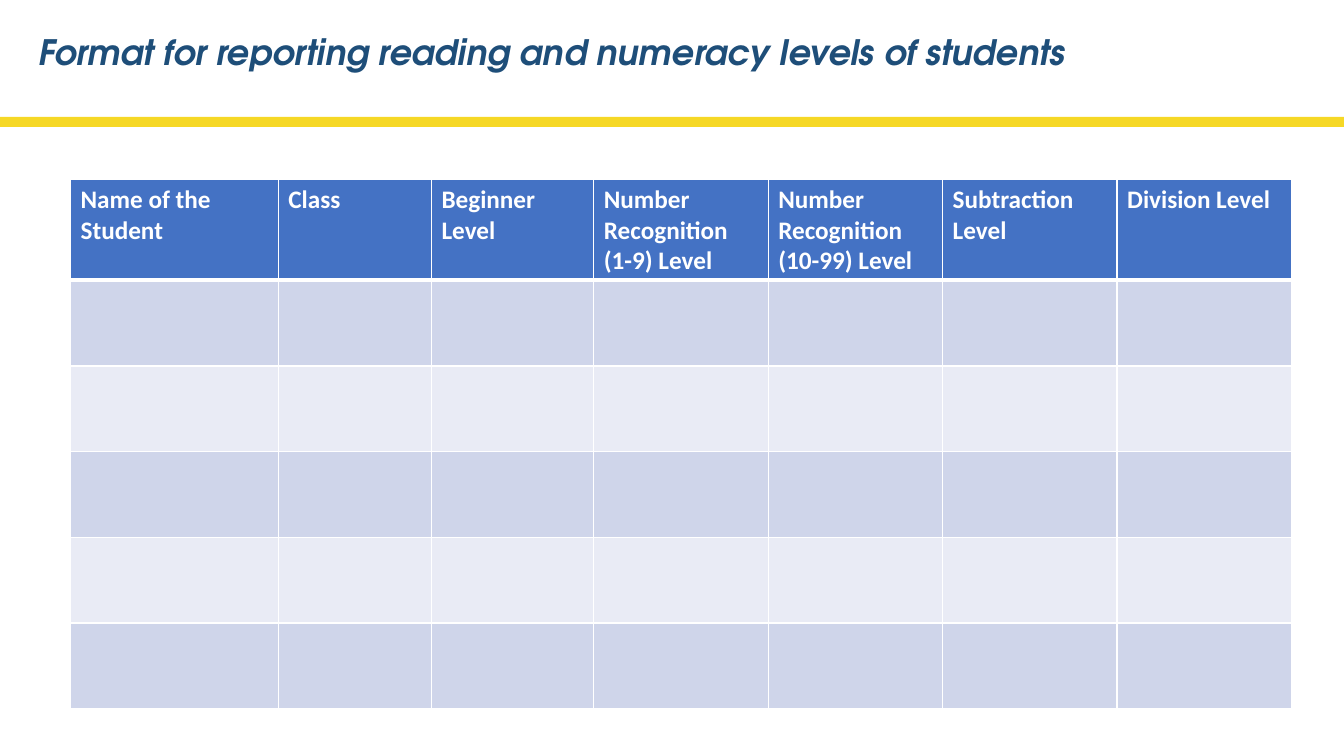
"""Build a slide with a blank reporting table for student levels."""
from lxml import etree
from pptx import Presentation
from pptx.dml.color import RGBColor
from pptx.enum.shapes import MSO_SHAPE
from pptx.enum.text import MSO_ANCHOR, MSO_AUTO_SIZE, PP_ALIGN
from pptx.oxml.ns import qn
from pptx.util import Pt

PX = 9144
RECT = MSO_SHAPE.RECTANGLE
TOP = MSO_ANCHOR.TOP
LEFT = PP_ALIGN.LEFT
FIT_SHAPE = MSO_AUTO_SIZE.SHAPE_TO_FIT_TEXT
NAVY = RGBColor(0x1E, 0x4E, 0x79)
YELLOW = RGBColor(0xF6, 0xD8, 0x26)
BLUE = RGBColor(0x44, 0x72, 0xC4)
BAND_DARK = RGBColor(0xCF, 0xD5, 0xEA)
BAND_LIGHT = RGBColor(0xE9, 0xEB, 0xF5)
WHITE = RGBColor(0xFF, 0xFF, 0xFF)

COLUMNS = [
    ("Name of the Student", 206),
    ("Class", 152),
    ("Beginner Level", 161),
    ("Number Recognition (1-9) Level", 173),
    ("Number Recognition (10-99) Level", 173),
    ("Subtraction Level", 173),
    ("Division Level", 173),
]
ROWS = 6
ROW_HEIGHT = 85


def set_border(cell, side, width):
    """Give one side of a cell a white line of the given width in points."""
    tc_pr = cell._tc.get_or_add_tcPr()
    ln = etree.SubElement(tc_pr, qn("a:" + side), w=str(Pt(width)))
    fill = etree.SubElement(ln, qn("a:solidFill"))
    etree.SubElement(fill, qn("a:srgbClr"), val=str(WHITE))


prs = Presentation()
prs.slide_width, prs.slide_height = 1333 * PX, 750 * PX
s = prs.slides.add_slide(prs.slide_layouts[5])

bar = s.shapes.add_shape(RECT, 0, 116 * PX, 1339 * PX, 10 * PX)
bar.shadow.inherit = False
bar.fill.solid()
bar.fill.fore_color.rgb = YELLOW
bar.line.fill.background()

title = s.shapes.title
title.left, title.top, title.width, title.height = 28 * PX, 14 * PX, 1148 * PX, 69 * PX
tf = title.text_frame
tf.text = "Format for reporting reading and numeracy levels of students"
tf.word_wrap = True
tf.auto_size = FIT_SHAPE
tf.vertical_anchor = TOP
tf.margin_left = tf.margin_right = tf.margin_top = tf.margin_bottom = 10 * PX
p = tf.paragraphs[0]
p.alignment = LEFT
p.line_spacing = 1.15
p.space_before = Pt(0)
p.font.name = "TeX Gyre Adventor"
p.font.size = Pt(25)
p.font.bold = p.font.italic = True
p.font.color.rgb = NAVY

width = sum(w for _, w in COLUMNS)
table = s.shapes.add_table(ROWS, len(COLUMNS), 70 * PX, 178 * PX,
                           width * PX, ROWS * ROW_HEIGHT * PX).table
for col, (heading, w) in enumerate(COLUMNS):
    table.columns[col].width = w * PX
    for row in range(ROWS):
        cell = table.cell(row, col)
        set_border(cell, "lnL", 1)
        set_border(cell, "lnR", 1)
        set_border(cell, "lnT", 3 if row == 1 else 1)
        set_border(cell, "lnB", 3 if row == 0 else 1)
        cell.fill.solid()
        cell.fill.fore_color.rgb = BAND_DARK if row % 2 else BAND_LIGHT
    header = table.cell(0, col)
    header.fill.fore_color.rgb = BLUE
    header.text = heading
    p = header.text_frame.paragraphs[0]
    p.font.name = "Calibri"
    p.font.size = Pt(18)
    p.font.bold = True
    p.font.color.rgb = WHITE

prs.save("out.pptx")
